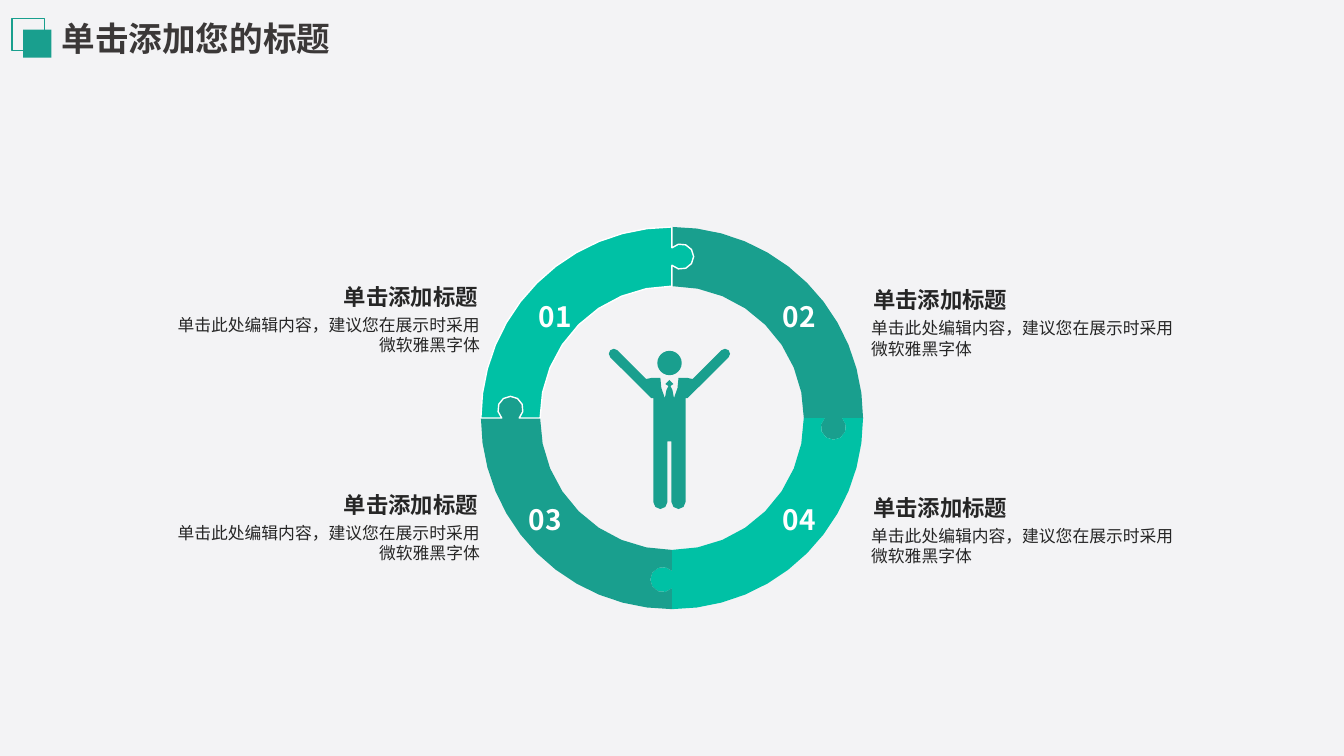
import collections
import math

import pptx
import pptx.dml.color
import pptx.enum.shapes
import pptx.enum.text
import pptx.oxml
import pptx.oxml.ns
import pptx.util

# The slide is a grid of 160 columns and 90 rows of square cells
COLUMNS, ROWS = 160, 90
CELL = 76200
FINE = 1000  # outline steps per cell

COLORS = {"background": "F3F3F5", "dark": "199F8E", "light": "00C1A5",
          "white": "FFFFFF", "title": "3B3838", "text": "262626"}
HEAVY = "Noto Sans CJK SC"
PLAIN = "Arial"
ALIGN = pptx.enum.text.PP_ALIGN
SHAPE = pptx.enum.shapes.MSO_SHAPE
MIDDLE = pptx.enum.text.MSO_ANCHOR.MIDDLE
Box = collections.namedtuple("Box", "left top width height")

HEADING = "单击添加标题"
BODY = "单击此处编辑内容，建议您在展示时采用微软雅黑字体"


def cells(count):
    return pptx.util.Emu(round(count * CELL))


def color(name):
    return pptx.dml.color.RGBColor.from_string(COLORS[name])


def paint(shape, fill=None, line=None):
    shape.shadow.inherit = False
    if fill:
        shape.fill.solid()
        shape.fill.fore_color.rgb = color(fill)
    else:
        shape.fill.background()
    if line:
        shape.line.color.rgb = color(line)
        shape.line.width = pptx.util.Pt(1)
    else:
        shape.line.fill.background()


def add_preset(slide, kind, box, fill=None, line=None):
    shape = slide.shapes.add_shape(kind, *map(cells, box))
    paint(shape, fill, line)
    return shape


def add_outline(slide, points, fill, line=None):
    points = [(x * FINE, y * FINE) for x, y in points]
    builder = slide.shapes.build_freeform(*points[0], scale=CELL / FINE)
    builder.add_line_segments(points[1:], close=True)
    paint(builder.convert_to_shape(), fill, line)


def write(shape, text, size, ink, bold=True, font=HEAVY, align=ALIGN.LEFT, spacing=0):
    shape.text_frame.word_wrap = True
    paragraph = shape.text_frame.paragraphs[0]
    paragraph.alignment = align
    run = paragraph.add_run()
    run.text = text
    run.font.size = pptx.util.Pt(size)
    run.font.bold = bold
    run.font.name = font
    run.font.color.rgb = color(ink)
    properties = run.font._element
    properties.set("lang", "zh-CN")
    if spacing:
        properties.set("spc", str(spacing))
    east_asian = pptx.oxml.parse_xml(
        f'<a:ea {pptx.oxml.ns.nsdecls("a")} typeface="{HEAVY}"/>')
    properties.find(pptx.oxml.ns.qn("a:latin")).addnext(east_asian)


def add_text(slide, box, text, size, ink, tight=False, **style):
    shape = slide.shapes.add_textbox(*map(cells, box))
    frame = shape.text_frame
    if tight:
        frame.margin_left = frame.margin_right = 0
        frame.margin_top = frame.margin_bottom = 0
    else:
        frame.vertical_anchor = MIDDLE
    write(shape, text, size, ink, **style)


def arc(x, y, radius, start, end, steps):
    """Points on a circle, in degrees counterclockwise, with y pointing up."""
    angles = [math.radians(start + (end - start) * i / steps) for i in range(steps + 1)]
    return [(x + radius * math.cos(a), y + radius * math.sin(a)) for a in angles]


def add_backdrop(slide, box):
    backdrop = add_preset(slide, SHAPE.RECTANGLE, box, "background")
    slide.shapes.title._element.addprevious(backdrop._element)


def add_header(slide, box):
    # Two overlapping squares, then the title
    for offset, size, fill, line in ((1.32, 3.36, "dark", None), (0, 3.84, None, "dark")):
        add_preset(slide, SHAPE.RECTANGLE,
                   Box(box.left + offset, box.top + offset, size, size), fill, line)
    title = slide.shapes.title
    title.left, title.top = cells(box.left + 4.68), cells(box.top - 0.64)
    title.width, title.height = cells(box.width - 4.68), cells(box.height)
    title.text_frame.vertical_anchor = MIDDLE
    write(title, "单击添加您的标题", 24, "title")


def ring_piece(radius):
    """Quarter ring right of the top, with a notch at its start and a knob at its end."""
    inner, middle, knob, shift = radius * 0.69, radius * 0.845, 1.5, 1.08
    reach = math.degrees(math.acos(-shift / knob))
    seam = [(0, radius), *arc(shift, middle, knob, reach, -reach, 8), (0, inner)]
    end_seam = [(y, -x) for x, y in reversed(seam)]
    # The seams already hold the ends of both arcs
    outer_arc = arc(0, 0, radius, 0, 90, 12)[1:-1]
    inner_arc = arc(0, 0, inner, 90, 0, 8)[1:-1]
    return outer_arc + seam + inner_arc + end_seam


def add_ring(slide, box):
    radius = box.width / 2
    center_x, center_y = box.left + radius, box.top + radius
    # Number, quarter turns clockwise, fill, line, place of the number
    pieces = (("02", 0, "dark", None, 12.7, -14.13),
              ("04", 1, "light", None, 12.7, 10.11),
              ("03", 2, "dark", None, -17.6, 10.11),
              ("01", 3, "light", "white", -16.32, -14.13))
    for _, turns, fill, line, _, _ in pieces:
        points = ring_piece(radius)
        for _ in range(turns):
            points = [(y, -x) for x, y in points]
        add_outline(slide, [(center_x + x, center_y - y) for x, y in points], fill, line)
    add_person(slide, center_x - 0.3, center_y)
    for number, _, _, _, x, y in pieces:
        add_text(slide, Box(center_x + x, center_y + y, 4.92, 4.08), number, 20, "white",
                 tight=True, align=ALIGN.CENTER, spacing=30)


def add_person(slide, center_x, center_y):
    add_preset(slide, SHAPE.OVAL, Box(center_x - 1.44, center_y - 8, 2.9, 2.9), "dark")
    # Right half from the tie over arm and leg, then its mirror image
    tie = [(0, 4.53), (0.48, 4.05), (0.12, 3.81), (0.36, 3.33), (0.54, 2.37)]
    collar = [(0.96, 3.57), (1.08, 4.77), (2.16, 4.77), (2.76, 4.65)]
    hand = arc(6.62, 7.65, 0.6, 135, -45, 4)
    side = [(2.16, 2.37), (1.92, 2.37)]
    foot = arc(1.08, -9.99, 0.84, 0, -180, 4)
    half = tie + collar + hand + side + foot + [(0.24, -2.79)]
    body = half + [(-x, y) for x, y in reversed(half[1:])]
    add_outline(slide, [(center_x + x, center_y - y) for x, y in body], "dark")


def add_caption(slide, box, align):
    heading_height, inset = 4.32, 0.95
    add_text(slide, box._replace(height=heading_height), HEADING, 16, "text", align=align)
    body_left = box.left + (inset if align == ALIGN.LEFT else 0)
    body = Box(body_left, box.top + heading_height, box.width - inset,
               box.height - heading_height)
    add_text(slide, body, BODY, 12, "text", tight=True, bold=False, font=PLAIN, align=align)


def main():
    presentation = pptx.Presentation()
    presentation.slide_width, presentation.slide_height = cells(COLUMNS), cells(ROWS)
    slide = presentation.slides.add_slide(presentation.slide_layouts[5])

    add_backdrop(slide, Box(0, 0, COLUMNS, ROWS))
    add_header(slide, Box(1.44, 2.2, 43.68, 6))
    add_ring(slide, Box(57.25, 27.02, 45.5, 45.5))
    for left, top, align in ((102.76, 33.55, ALIGN.LEFT), (20.88, 33.12, ALIGN.RIGHT)):
        for row in range(2):
            add_caption(slide, Box(left, top + row * 24.74, 37.2, 9.12), align)
    presentation.save("out.pptx")


if __name__ == "__main__":
    main()
